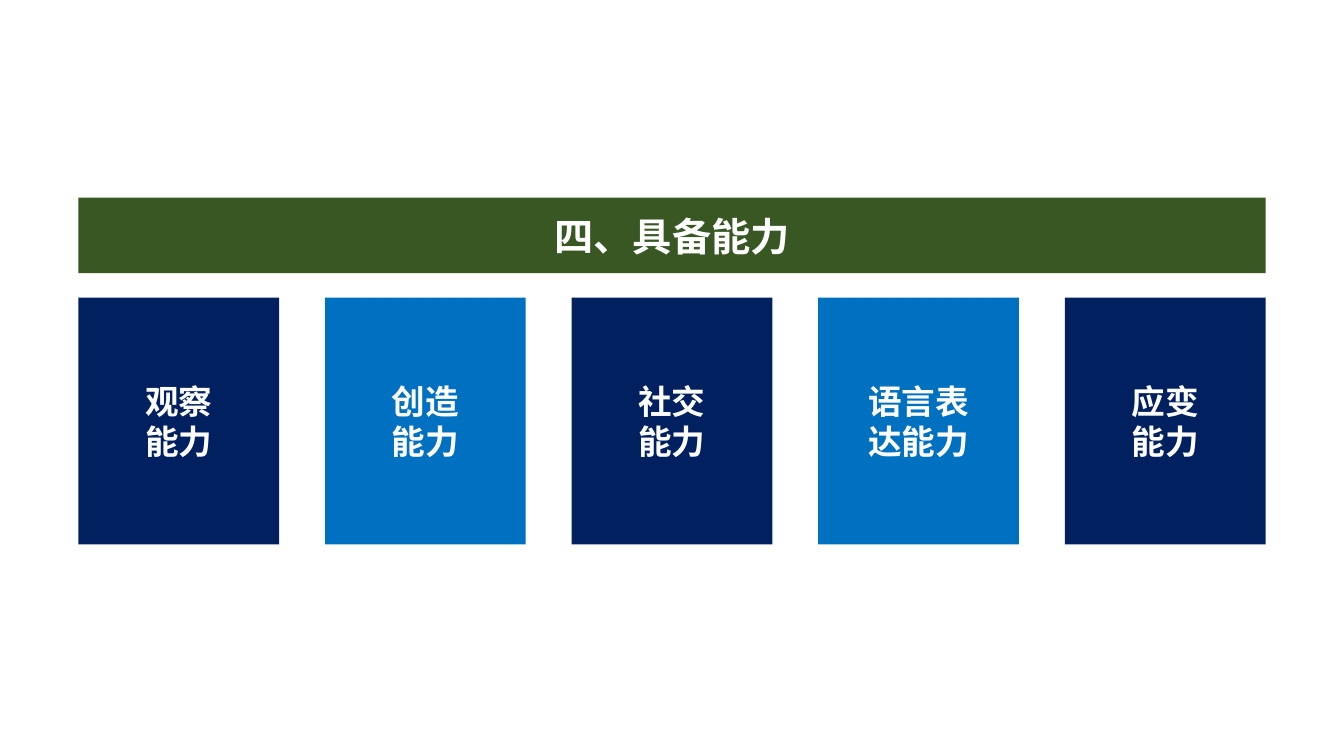
import pptx
import pptx.util
import pptx.dml.color
import pptx.enum.shapes
import pptx.enum.text
import pptx.oxml.ns
from lxml import etree

Pt = pptx.util.Pt
FACE = "Noto Sans CJK SC"
NAVY, BLUE, GREEN, WHITE = "002060", "0070C0", "385723", "FFFFFF"
SKILLS = ["观察\n能力", "创造\n能力", "社交\n能力", "语言表\n达能力", "应变\n能力"]


def paint(form, tint):
    form.solid()
    form.fore_color.rgb = pptx.dml.color.RGBColor.from_string(tint)


def write(shape, text, size=24, tint=WHITE, bold=True):
    frame = shape.text_frame
    frame.text = text
    frame.word_wrap = True
    frame.auto_size = pptx.enum.text.MSO_AUTO_SIZE.NONE
    frame.vertical_anchor = pptx.enum.text.MSO_ANCHOR.MIDDLE
    for para in frame.paragraphs:
        para.alignment = pptx.enum.text.PP_ALIGN.CENTER
        for run in para.runs:
            font = run.font
            font.size, font.bold, font.name = Pt(size), bold, FACE
            paint(font.fill, tint)
            props = run._r.get_or_add_rPr()
            etree.SubElement(props, pptx.oxml.ns.qn("a:ea"), typeface=FACE)


def banner(slide, left, top, width, height):
    title = slide.shapes.title
    title.left, title.top = Pt(left), Pt(top)
    title.width, title.height = Pt(width), Pt(height)
    paint(title.fill, GREEN)
    write(title, "四、具备能力", size=28)


def cards(slide, left, top, width, height):
    wide = 143.4
    step = (width - wide) / (len(SKILLS) - 1)
    for i, skill in enumerate(SKILLS):
        card = slide.shapes.add_shape(
            pptx.enum.shapes.MSO_SHAPE.RECTANGLE,
            Pt(left + i * step), Pt(top), Pt(wide), Pt(height))
        card.shadow.inherit = False
        card.line.fill.background()
        paint(card.fill, BLUE if i % 2 else NAVY)
        write(card, skill)


def main():
    deck = pptx.Presentation()
    deck.slide_width, deck.slide_height = Pt(960), Pt(540)
    slide = deck.slides.add_slide(deck.slide_layouts[5])
    banner(slide, 56, 141.2, 848, 54)
    cards(slide, 56, 212.5, 848, 176.4)
    deck.save("out.pptx")


if __name__ == "__main__":
    main()
